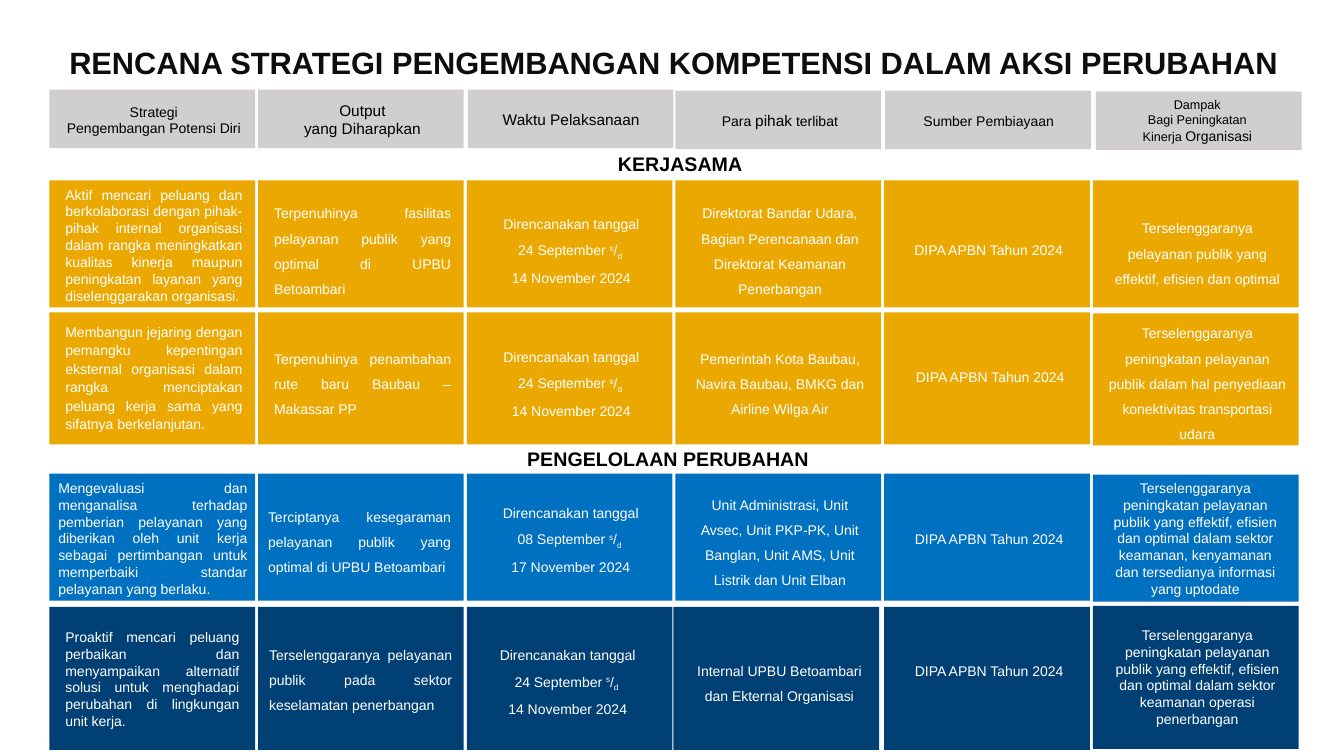
import pptx
import pptx.util
import pptx.dml.color
import pptx.enum.shapes
import pptx.enum.text
import lxml.etree

Inches = pptx.util.Inches
Align = pptx.enum.text.PP_ALIGN
Anchor = pptx.enum.text.MSO_ANCHOR
DRAWING = "http://schemas.openxmlformats.org/drawingml/2006/main"

TITLE = "RENCANA STRATEGI PENGEMBANGAN KOMPETENSI DALAM AKSI PERUBAHAN"
SECTIONS = [
    ("KERJASAMA", 6.03, 1.46, 1.45),
    ("PENGELOLAAN PERUBAHAN", 5.13, 4.38, 3.02),
]
HEADERS = [
    (0.49, 0.89, 0.97, 0.44, 10, ["Strategi", "Pengembangan Potensi Diri"]),
    (2.56, 0.89, 0.95, 0.47, 11, ["Output", "yang Diharapkan"]),
    (4.64, 0.89, 1.04, 0.29, 11, ["Waktu Pelaksanaan"]),
    (6.70, 0.90, 1.05, 0.29, 10, [[("Para ", {}), ("pihak", {"size": 11}), (" terlibat", {})]]),
    (8.78, 0.90, 1.06, 0.27, 10, ["Sumber Pembiayaan"]),
    (10.87, 0.91, 0.91, 0.57, 9,
     ["Dampak", "Bagi Peningkatan", [("Kinerja ", {}), ("Organisasi", {"size": 10})]]),
]


def schedule(start, end):
    return [
        "Direncanakan tanggal",
        [(start + " ", {}), ("s", {"baseline": 30}), ("/", {}), ("d ", {"baseline": -25})],
        end,
    ]


FUNDING = ["DIPA APBN Tahun 2024"]

# fmt: off
ROWS = [
    (1.79, 1.26, "EBA800", [
        (1.79, 1.28, 1, ["Aktif mencari peluang dan berkolaborasi dengan pihak-pihak internal organisasi dalam rangka meningkatkan kualitas kinerja maupun peningkatan layanan yang diselenggarakan organisasi."]),
        (1.91, 1.08, 1.5, ["Terpenuhinya fasilitas pelayanan publik yang optimal di UPBU Betoambari"]),
        (2.03, 0.83, 1.5, schedule("24 September", "14 November 2024")),
        (1.91, 1.08, 1.5, ["Direktorat Bandar Udara, Bagian Perencanaan dan Direktorat Keamanan Penerbangan"]),
        (2.28, 0.32, 1.5, FUNDING),
        (2.06, 0.83, 1.5, ["Terselenggaranya pelayanan publik yang effektif, efisien dan optimal"]),
    ]),
    (3.10, 1.31, "EBA800", [
        (3.14, 1.20, 1.1, ["Membangun jejaring dengan pemangku kepentingan eksternal organisasi dalam rangka menciptakan peluang kerja sama yang sifatnya berkelanjutan."]),
        (3.35, 0.83, 1.5, ["Terpenuhinya penambahan rute baru Baubau – Makassar PP"]),
        (3.35, 0.83, 1.5, schedule("24 September", "14 November 2024")),
        (3.35, 0.83, 1.5, ["Pemerintah Kota Baubau, Navira Baubau, BMKG dan Airline Wilga Air"]),
        (3.54, 0.32, 1.5, FUNDING),
        (3.10, 1.33, 1.5, ["Terselenggaranya peningkatan pelayanan publik dalam hal penyediaan konektivitas transportasi udara"]),
    ]),
    (4.70, 1.26, "0070C0", [
        (4.70, 1.28, 1, ["Mengevaluasi dan menganalisa terhadap pemberian pelayanan yang diberikan oleh unit kerja sebagai pertimbangan untuk memperbaiki standar pelayanan yang berlaku."]),
        (4.92, 0.83, 1.5, ["Terciptanya kesegaraman pelayanan publik yang optimal di UPBU Betoambari"]),
        (4.90, 0.83, 1.5, schedule("08 September", "17 November 2024")),
        (4.80, 1.08, 1.5, ["Unit Administrasi, Unit Avsec, Unit PKP-PK, Unit Banglan, Unit AMS, Unit Listrik dan Unit Elban"]),
        (5.14, 0.32, 1.5, FUNDING),
        (4.70, 1.28, 1, ["Terselenggaranya peningkatan pelayanan publik yang effektif, efisien dan optimal dalam sektor keamanan, kenyamanan dan tersedianya informasi yang uptodate"]),
    ]),
    (6.02, 1.42, "004075", [
        (6.18, 1.11, 1, ["Proaktif mencari peluang perbaikan dan menyampaikan alternatif solusi untuk menghadapi perubahan di lingkungan unit kerja."]),
        (6.29, 0.83, 1.5, ["Terselenggaranya pelayanan publik pada sektor keselamatan penerbangan"]),
        (6.31, 0.83, 1.5, schedule("24 September", "14 November 2024")),
        (6.45, 0.57, 1.5, ["Internal UPBU Betoambari dan Ekternal Organisasi"]),
        (6.45, 0.32, 1.5, FUNDING),
        (6.16, 1.11, 1, ["Terselenggaranya peningkatan pelayanan publik yang effektif, efisien dan optimal dalam sektor keamanan operasi penerbangan"]),
    ]),
]
# fmt: on
CARD_SHIFTS = {(1, 5): (0, 0.01), (2, 5): (0, 0.01), (3, 5): (0, -0.01), (3, 3): (-0.02, 0)}
TEXT_SPANS = {
    (2, 0): (0.48, 2.07), (3, 0): (0.55, 1.92), (2, 1): (2.56, 2.01), (3, 1): (2.57, 2.01),
    (2, 2): (4.64, 2.04), (3, 2): (4.61, 2.04), (1, 4): (8.85, 1.94), (2, 4): (8.84, 1.94),
    (3, 4): (8.84, 1.94), (3, 3): (6.75, 1.96), (2, 5): (10.87, 1.97),
}
FIRST_LEFT, COLUMN_STEP, CARD_WIDTH = 0.49, 2.07, 2.04
TEXT_INSET, TEXT_WIDTH = 0.06, 1.95
HEADER_HEIGHT = 0.58


def color(value):
    return pptx.dml.color.RGBColor.from_string(value)


def write(box, paragraphs, size=10, ink="FFFFFF", bold=False, align=Align.CENTER,
          spacing=1, anchor=Anchor.MIDDLE, wrap=True):
    frame = box.text_frame
    frame.word_wrap = wrap
    frame.vertical_anchor = anchor
    for index, content in enumerate(paragraphs):
        paragraph = frame.add_paragraph() if index else frame.paragraphs[0]
        paragraph.alignment = align
        paragraph.line_spacing = spacing
        for words, style in [(content, {})] if isinstance(content, str) else content:
            run = paragraph.add_run()
            run.text = words
            run.font.name = "Arial"
            run.font.size = pptx.util.Pt(style.get("size", size))
            run.font.bold = bold
            run.font.color.rgb = color(ink)
            if "baseline" in style:
                run._r.get_or_add_rPr().set("baseline", str(style["baseline"] * 1000))


def add_card(slide, left, top, width, height, fill):
    card = slide.shapes.add_shape(
        pptx.enum.shapes.MSO_SHAPE.RECTANGLE,
        Inches(left), Inches(top), Inches(width), Inches(height))
    card.shadow.inherit = False
    card.fill.solid()
    card.fill.fore_color.rgb = color(fill)
    card.line.fill.background()
    return card


def add_label(slide, left, top, width, height):
    return slide.shapes.add_textbox(Inches(left), Inches(top), Inches(width), Inches(height))


def add_text_shadow(run):
    effects = lxml.etree.fromstring(
        f'<a:effectLst xmlns:a="{DRAWING}">'
        '<a:outerShdw blurRad="50800" dist="38100" dir="2700000" algn="tl">'
        '<a:srgbClr val="000000"><a:alpha val="40000"/></a:srgbClr>'
        '</a:outerShdw></a:effectLst>')
    run._r.get_or_add_rPr().find(f"{{{DRAWING}}}solidFill").addnext(effects)


def main():
    deck = pptx.Presentation()
    deck.slide_width, deck.slide_height = Inches(13.33), Inches(7.5)
    slide = deck.slides.add_slide(deck.slide_layouts[5])

    title = slide.shapes.title
    title.left, title.top = Inches(0.52), Inches(0.17)
    title.width, title.height = Inches(12.32), Inches(0.61)
    write(title, [TITLE], size=22, ink="0D0D0D", bold=True,
          spacing=pptx.util.Pt(42), anchor=Anchor.TOP, wrap=False)
    title.text_frame.auto_size = pptx.enum.text.MSO_AUTO_SIZE.SHAPE_TO_FIT_TEXT
    add_text_shadow(title.text_frame.paragraphs[0].runs[0])

    for row, (row_top, row_height, fill, cells) in enumerate(ROWS):
        for column, (text_top, text_height, spacing, paragraphs) in enumerate(cells):
            left = FIRST_LEFT + column * COLUMN_STEP
            shift_x, shift_y = CARD_SHIFTS.get((row, column), (0, 0))
            add_card(slide, left + shift_x, row_top + shift_y, CARD_WIDTH, row_height, fill)
            text_left, text_width = TEXT_SPANS.get((row, column), (left + TEXT_INSET, TEXT_WIDTH))
            label = add_label(slide, text_left, text_top, text_width, text_height)
            write(label, paragraphs, spacing=spacing,
                  align=Align.JUSTIFY if column < 2 else Align.CENTER)

    for column, (left, top, text_top, text_height, size, paragraphs) in enumerate(HEADERS):
        add_card(slide, left, top, CARD_WIDTH, HEADER_HEIGHT, "D0CECE")
        text_left = FIRST_LEFT + column * COLUMN_STEP + TEXT_INSET
        heading = add_card(slide, text_left, text_top, TEXT_WIDTH, text_height, "D0CECE")
        write(heading, paragraphs, size=size, ink="000000")

    for section, left, top, width in SECTIONS:
        label = add_label(slide, left, top, width, 0.34)
        write(label, [section], size=14, ink="000000", bold=True,
              align=Align.LEFT, anchor=Anchor.TOP, wrap=False)

    deck.save("out.pptx")


if __name__ == "__main__":
    main()
